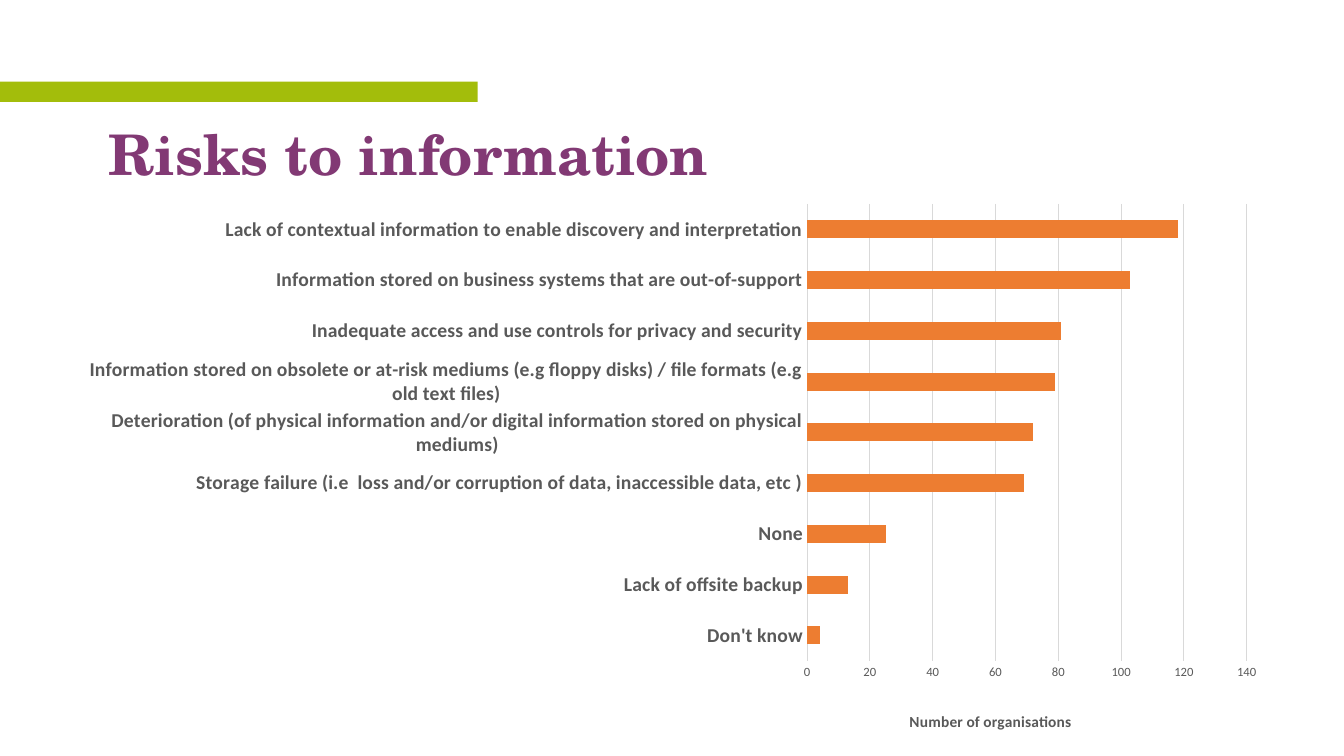
from lxml.etree import SubElement
from pptx import Presentation
from pptx.chart.data import CategoryChartData
from pptx.dml.color import RGBColor
from pptx.enum.chart import XL_CHART_TYPE as ChartType, XL_TICK_MARK as TickMark
from pptx.enum.shapes import MSO_SHAPE as Shape
from pptx.enum.text import MSO_ANCHOR as Anchor, MSO_AUTO_SIZE as AutoSize, PP_ALIGN as Align
from pptx.oxml.ns import qn
from pptx.util import Cm, Pt

TITLE = "Risks to information"
AXIS_TITLE = "Number of organisations"
RISKS = [
    ("Don't know", 4),
    ("Lack of offsite backup", 13),
    ("None", 25),
    ("Storage failure (i.e  loss and/or corruption of data, inaccessible data, etc )", 69),
    ("Deterioration (of physical information and/or digital information stored on physical mediums)", 72),
    ("Information stored on obsolete or at-risk mediums (e.g floppy disks) / file formats (e.g old text files)", 79),
    ("Inadequate access and use controls for privacy and security", 81),
    ("Information stored on business systems that are out-of-support", 103),
    ("Lack of contextual information to enable discovery and interpretation", 118),
]
PURPLE, GREEN, ORANGE = "823974", "A3BD0B", "ED7D31"
GREY, PALE = "595959", "D9D9D9"
TITLE_BOX = (2.49, 3.07, 29.16, 1.78)
BAND_BOX = (0, 2.06, 12.04, 0.51)
CHART_BOX = (2.21, 4.88, 30.07, 13.67)
PLOT_BOX = (20.34, 5.14, 11.08, 11.52)
AXIS_TITLE_SPOT = (22.85, 17.85)


def color(value):
    return RGBColor.from_string(value)


def place(shape, box):
    shape.left, shape.top, shape.width, shape.height = map(Cm, box)


def style(font, name, size, shade, bold):
    font.name, font.size, font.bold = name, Pt(size), bold
    font.color.rgb = color(shade)


def draw_line(line, shade):
    line.color.rgb = color(shade)
    line.width = Pt(0.75)


def set_layout(parent, box, inner=False):
    for old in parent.findall(qn("c:layout")):
        parent.remove(old)
    layout = parent.makeelement(qn("c:layout"))
    manual = SubElement(layout, qn("c:manualLayout"))
    left, top, width, height = CHART_BOX
    fractions = [(box[0] - left) / width, (box[1] - top) / height]
    fractions += [side / whole for side, whole in zip(box[2:], (width, height))]
    settings = [("layoutTarget", "inner")] if inner else []
    settings += [("xMode", "edge"), ("yMode", "edge")]
    settings += [(key, f"{value:.4f}") for key, value in zip("xywh", fractions)]
    for key, value in settings:
        SubElement(manual, qn(f"c:{key}")).set("val", value)
    parent.insert(len(parent.findall(qn("c:tx"))), layout)


def add_title(page):
    title = page.shapes.title
    place(title, TITLE_BOX)
    frame = title.text_frame
    frame.text = TITLE
    frame.word_wrap = True
    frame.auto_size = AutoSize.NONE
    frame.vertical_anchor = Anchor.MIDDLE
    para = frame.paragraphs[0]
    para.alignment = Align.LEFT
    para.line_spacing = 0.9
    style(para.runs[0].font, "TeX Gyre Schola", 40, PURPLE, True)


def add_band(page):
    band = page.shapes.add_shape(Shape.RECTANGLE, *map(Cm, BAND_BOX))
    band.shadow.inherit = False
    band.fill.solid()
    band.fill.fore_color.rgb = color(GREEN)
    band.line.fill.background()


def add_risk_chart(page):
    names, counts = zip(*RISKS)
    data = CategoryChartData()
    data.categories = names
    data.add_series("Series 1", counts)
    chart = page.shapes.add_chart(ChartType.BAR_CLUSTERED, *map(Cm, CHART_BOX), data).chart
    style(chart.font, "Calibri", 10, "000000", False)
    chart.has_legend = False
    chart.has_title = False

    plot = chart.plots[0]
    plot.gap_width = 182
    plot.vary_by_categories = False
    bars = plot.series[0].format.fill
    bars.solid()
    bars.fore_color.rgb = color(ORANGE)

    risks, numbers = chart.category_axis, chart.value_axis
    for axis, size, bold in ((risks, 14, True), (numbers, 9, False)):
        axis.major_tick_mark = axis.minor_tick_mark = TickMark.NONE
        style(axis.tick_labels.font, "Calibri", size, GREY, bold)
    draw_line(risks.format.line, PALE)
    numbers.format.line.fill.background()
    numbers.minimum_scale, numbers.maximum_scale, numbers.major_unit = 0, 140, 20
    numbers.has_major_gridlines = True
    draw_line(numbers.major_gridlines.format.line, PALE)

    caption = numbers.axis_title
    caption.text_frame.text = AXIS_TITLE
    style(caption.text_frame.paragraphs[0].runs[0].font, "Calibri", 11, GREY, True)
    set_layout(caption._element, AXIS_TITLE_SPOT)
    set_layout(chart._chartSpace.find(f".//{qn('c:plotArea')}"), PLOT_BOX, inner=True)


def main():
    deck = Presentation()
    deck.slide_width, deck.slide_height = Cm(33.87), Cm(19.05)
    page = deck.slides.add_slide(deck.slide_layouts[5])
    add_title(page)
    add_band(page)
    add_risk_chart(page)
    deck.save("out.pptx")


if __name__ == "__main__":
    main()
